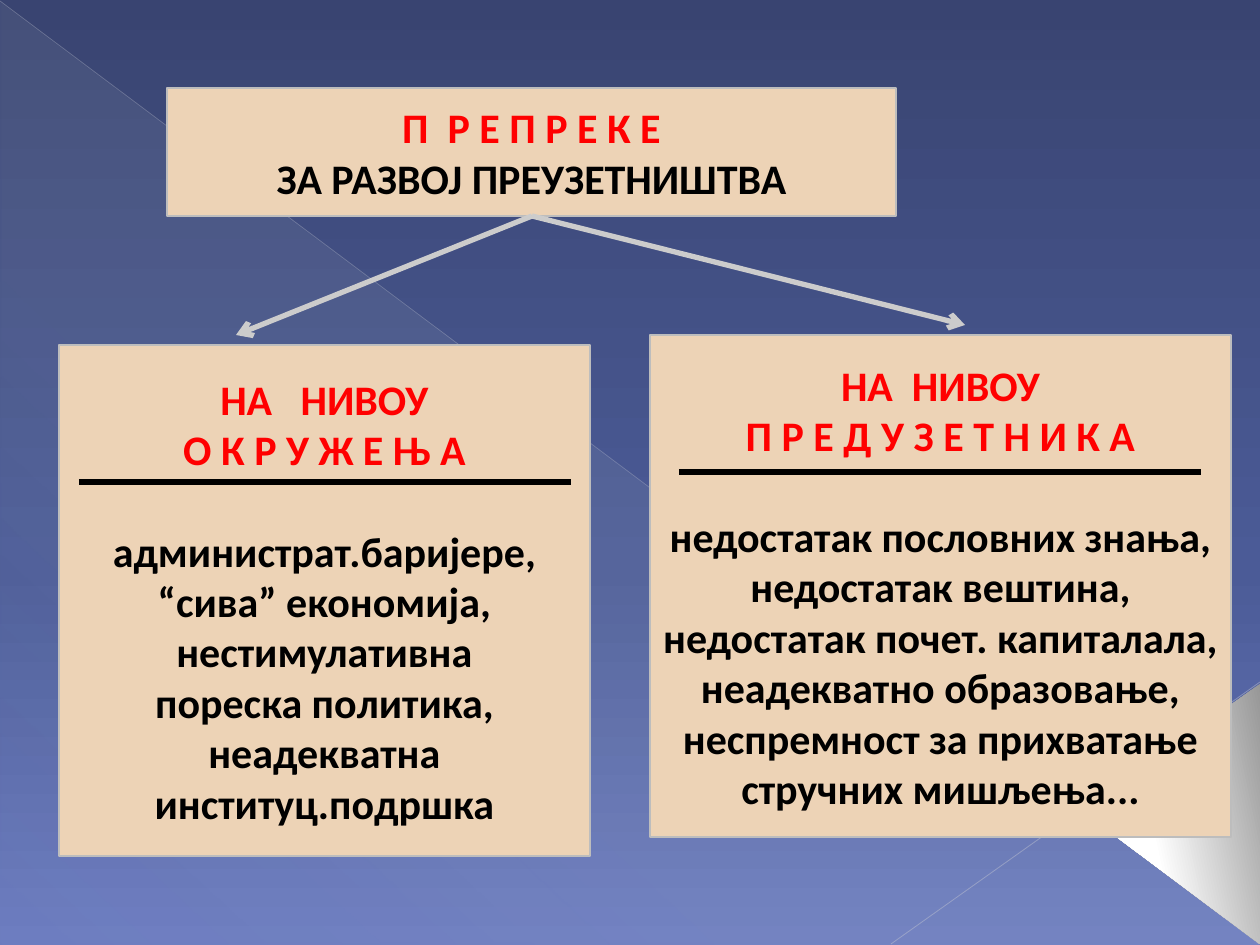
"""Build a slide on obstacles to entrepreneurship at two levels."""
import dataclasses

import lxml.etree
import pptx
import pptx.dml.color
import pptx.enum.shapes
import pptx.enum.text
import pptx.oxml.ns
import pptx.util


@dataclasses.dataclass(frozen=True)
class Theme:
    font: str = "Calibri"
    size: int = 24
    gap: int = 29
    heading: str = "FF0000"
    body: str = "000000"
    panel: str = "EDD3B6"
    border: str = "BDBDBD"
    arrow: str = "CCCCCC"
    long_ray: str = "BABECD"
    short_ray: str = "C2C5D2"
    sky: tuple = ((0, "394471", 100), (60, "4B5B97", 100), (100, "6C7CC0", 100))
    haze: tuple = ((0, "C5D1D7", 10), (70, "C5D1D7", 8), (100, "C5D1D7", 1))
    fold: tuple = ((0, "979797", 100), (60, "FFFFFF", 100), (100, "FFFFFF", 100))


theme = Theme()
PX = 914400 / 126
qn = pptx.oxml.ns.qn
rgb = pptx.dml.color.RGBColor.from_string
Pt = pptx.util.Pt
SHAPE = pptx.enum.shapes.MSO_SHAPE


def paint_gradient(fill, properties, stops, angle):
    fill.gradient()
    gradient = properties.find(qn("a:gradFill"))
    for child in list(gradient):
        gradient.remove(child)
    stop_list = lxml.etree.SubElement(gradient, qn("a:gsLst"))
    for position, color, opacity in stops:
        stop = lxml.etree.SubElement(stop_list, qn("a:gs"), pos=str(position * 1000))
        tint = lxml.etree.SubElement(stop, qn("a:srgbClr"), val=color)
        lxml.etree.SubElement(tint, qn("a:alpha"), val=str(opacity * 1000))
    lxml.etree.SubElement(gradient, qn("a:lin"), ang=str(angle * 60000), scaled="0")


def fill_panel(panel, lines, heading_rows):
    panel.fill.solid()
    panel.fill.fore_color.rgb = rgb(theme.panel)
    panel.line.color.rgb = rgb(theme.border)
    panel.line.width = Pt(1)
    frame = panel.text_frame
    frame.text = "\n".join(lines)
    frame.word_wrap = True
    frame.auto_size = pptx.enum.text.MSO_AUTO_SIZE.NONE
    frame.vertical_anchor = pptx.enum.text.MSO_ANCHOR.MIDDLE
    for row, paragraph in enumerate(frame.paragraphs):
        paragraph.alignment = pptx.enum.text.PP_ALIGN.CENTER
        font = paragraph.runs[0].font
        font.name, font.size, font.bold = theme.font, Pt(theme.size), True
        font.color.rgb = rgb(theme.heading if row < heading_rows else theme.body)


deck = pptx.Presentation()
deck.slide_width, deck.slide_height = round(1260 * PX), round(945 * PX)
slide = deck.slides.add_slide(deck.slide_layouts[5])
shapes = slide.shapes

sky = slide.background.fill
sky.solid()
paint_gradient(sky, slide.element.find(".//" + qn("p:bgPr")), theme.sky, 90)

backdrop = [
    (SHAPE.RIGHT_TRIANGLE, (1, 2, 1259, 943), 0, theme.haze, 133),
    (SHAPE.ISOSCELES_TRIANGLE, (1041, 725, 261, 178), 270, theme.fold, 258),
]
for kind, box, rotation, stops, angle in backdrop:
    facet = shapes.add_shape(kind, *(round(side * PX) for side in box))
    facet.rotation = rotation
    facet.shadow.inherit = False
    facet.line.fill.background()
    paint_gradient(facet.fill, facet.element.spPr, stops, angle)
    if kind == SHAPE.ISOSCELES_TRIANGLE:
        facet.adjustments[0] = 0.51

heading = shapes.title
heading.left, heading.top, heading.width, heading.height = (
    round(side * PX) for side in (167, 88, 729, 128))
fill_panel(heading, ["П  Р Е П Р Е К Е", "ЗА РАЗВОЈ ПРЕУЗЕТНИШТВА"], 1)

levels = [
    ((59, 345, 531, 511), [
        "НА   НИВОУ",
        "О К Р У Ж Е Њ А",
        "администрат.баријере,",
        "“сива” економија,",
        "нестимулативна",
        "пореска политика,",
        "неадекватна институц.подршка",
    ]),
    ((650, 335, 581, 502), [
        "НА  НИВОУ",
        "П Р Е Д У З Е Т Н И К А",
        "недостатак пословних знања,",
        "недостатак вештина,",
        "недостатак почет. капиталала,",
        "неадекватно образовање,",
        "неспремност за прихватање",
        "стручних мишљења...",
    ]),
]
for box, obstacles in levels:
    level = shapes.add_shape(SHAPE.FLOWCHART_PROCESS, *(round(side * PX) for side in box))
    level.shadow.inherit = False
    fill_panel(level, obstacles, 2)
    level.text_frame.paragraphs[2].space_before = Pt(theme.gap)

strokes = [
    ((0, 1, 1259, 944), theme.long_ray, 0.39, 35, False),
    ((1260, 682, 891, 944), theme.short_ray, 0.47, 45, False),
    ((79, 482, 571, 482), theme.body, 3, 100, False),
    ((679, 472, 1201, 472), theme.body, 3, 100, False),
    ((532, 216, 236, 335), theme.arrow, 3, 100, True),
    ((532, 216, 965, 325), theme.arrow, 3, 100, True),
]
rays = []
for ends, color, width, opacity, pointed in strokes:
    stroke = shapes.add_connector(
        pptx.enum.shapes.MSO_CONNECTOR.STRAIGHT, *(round(end * PX) for end in ends))
    stroke.line.color.rgb = rgb(color)
    stroke.line.width = Pt(width)
    outline = stroke.element.spPr.find(qn("a:ln"))
    if opacity < 100:
        tint = outline.find(".//" + qn("a:srgbClr"))
        lxml.etree.SubElement(tint, qn("a:alpha"), val=str(opacity * 1000))
        rays.append(stroke)
    if pointed:
        lxml.etree.SubElement(outline, qn("a:tailEnd"), type="arrow")
    lxml.etree.SubElement(stroke.element.spPr, qn("a:effectLst"))

tree = heading.element.getparent()
first_facet = tree.index(heading.element) + 1
for offset, ray in enumerate(rays):
    tree.insert(first_facet + 1 + offset, ray.element)
tree.insert(first_facet + 1 + len(rays), heading.element)

deck.save("out.pptx")
